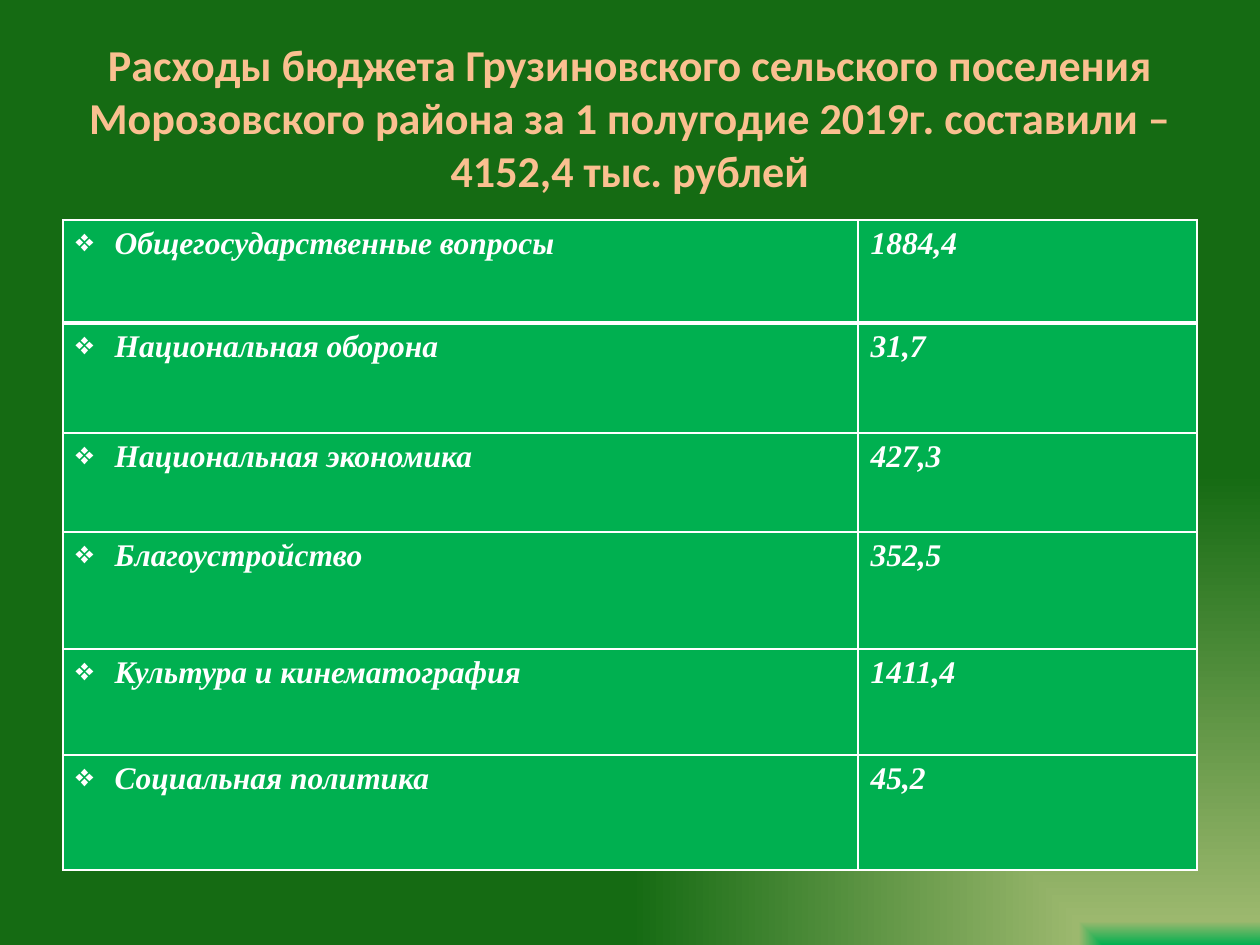
from lxml import etree
from pptx import Presentation
from pptx import util as u
from pptx.dml.color import RGBColor
from pptx.enum import text
from pptx.oxml import ns

SCALE = 914400 / 126  # EMU in one px
GREEN = RGBColor(0x00, 0xB0, 0x50)
OLIVE = RGBColor(0x9C, 0xB8, 0x6E)
DARK_GREEN = RGBColor(0x15, 0x6B, 0x13)
PEACH = RGBColor(0xFA, 0xC0, 0x90)
WHITE = RGBColor(0xFF, 0xFF, 0xFF)

TITLE = ("Расходы бюджета Грузиновского сельского поселения "
         "Морозовского района за 1 полугодие 2019г. составили – 4152,4 тыс. рублей")
EXPENSES = [  # item, thousand roubles, row height in px
    ("Общегосударственные вопросы", "1884,4", 103),
    ("Национальная оборона", "31,7", 110),
    ("Национальная экономика", "427,3", 99),
    ("Благоустройство", "352,5", 117),
    ("Культура и кинематография", "1411,4", 106),
    ("Социальная политика", "45,2", 115),
]
COLUMNS = (795, 339)


def px(length):
    return u.Emu(round(length * SCALE))


def add(parent, tag, **attributes):
    child = etree.SubElement(parent, ns.qn(tag))
    for name, value in attributes.items():
        child.set(name, str(value))
    return child


def write(frame, words, font, size, color, italic=False, align=None, bullet=None):
    para = frame.paragraphs[0]
    para.alignment = align
    span = para.add_run()
    span.text = words
    span.font.name, span.font.size = font, u.Pt(size)
    span.font.bold, span.font.italic = True, italic
    span.font.color.rgb = color
    if bullet:
        props = para._p.get_or_add_pPr()
        props.set("marL", str(px(39)))
        props.set("indent", str(-px(39)))
        add(props, "a:buChar", char=bullet)


def paint_background(page):
    page.background.fill.solid()
    props = page._element.cSld.find(ns.qn("p:bg")).find(ns.qn("p:bgPr"))
    props.remove(props[0])
    gradient = etree.Element(ns.qn("a:gradFill"), rotWithShape="1")
    props.insert(0, gradient)
    stops = add(gradient, "a:gsLst")
    for percent, color in ((0, GREEN), (5, OLIVE), (100, DARK_GREEN)):
        add(add(stops, "a:gs", pos=percent * 1000), "a:srgbClr", val=color)
    corner = add(gradient, "a:path", path="rect")
    add(corner, "a:fillToRect", l=100000, t=100000)


def place_title(page, left, top, width, height):
    title = page.shapes.title
    title.left, title.top, title.width, title.height = map(px, (left, top, width, height))
    frame = title.text_frame
    frame.word_wrap = True
    frame.auto_size = text.MSO_AUTO_SIZE.NONE
    frame.vertical_anchor = text.MSO_ANCHOR.MIDDLE
    write(frame, TITLE, "Calibri", 25.2, PEACH, align=text.PP_ALIGN.CENTER)


def format_cell(cell, top_line, bottom_line):
    props = cell._tc.get_or_add_tcPr()
    for side, points in (("L", 1), ("R", 1), ("T", top_line), ("B", bottom_line)):
        line = add(props, f"a:ln{side}", w=u.Pt(points))
        add(add(line, "a:solidFill"), "a:srgbClr", val=WHITE)
    cell.fill.solid()
    cell.fill.fore_color.rgb = GREEN


def place_table(page, left, top):
    height = sum(row[2] for row in EXPENSES)
    table = page.shapes.add_table(len(EXPENSES), len(COLUMNS), px(left), px(top),
                                  px(sum(COLUMNS)), px(height)).table
    for column, width in zip(table.columns, COLUMNS):
        column.width = px(width)
    for index, (item, amount, row_height) in enumerate(EXPENSES):
        table.rows[index].height = px(row_height)
        for column, (words, bullet) in enumerate(((item, "❖"), (amount, None))):
            cell = table.cell(index, column)
            # A thick line parts the first row from the rest
            format_cell(cell, 3 if index == 1 else 1, 3 if index == 0 else 1)
            write(cell.text_frame, words, "Times New Roman", 18, WHITE,
                  italic=True, bullet=bullet)


def main():
    deck = Presentation()
    deck.slide_width, deck.slide_height = px(1260), px(945)
    page = deck.slides.add_slide(deck.slide_layouts[5])
    paint_background(page)
    place_title(page, 63, 38, 1134, 158)
    place_table(page, 63, 220)
    deck.save("out.pptx")


if __name__ == "__main__":
    main()
